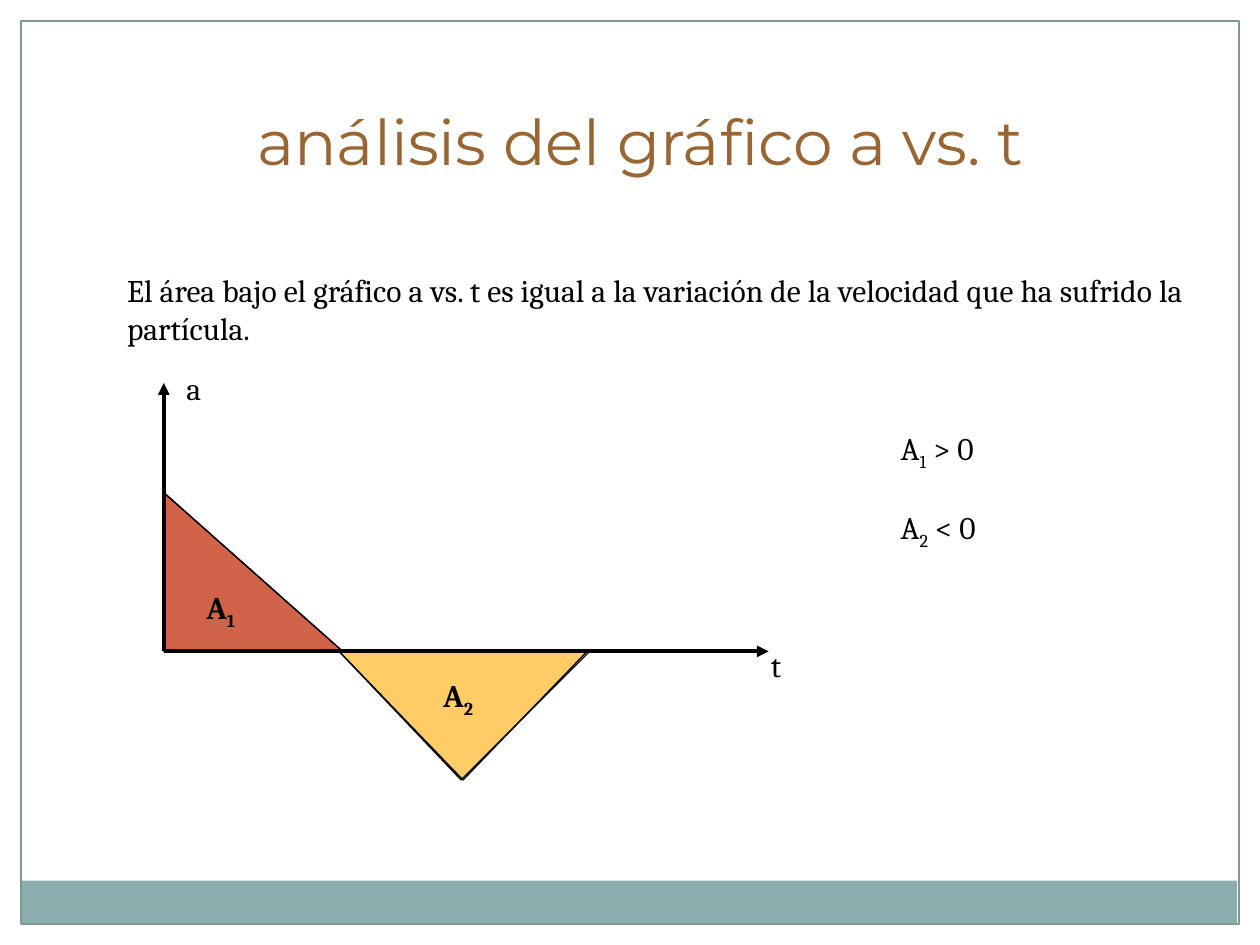
from lxml.etree import SubElement
from pptx import Presentation
from pptx.dml.color import RGBColor
from pptx.enum.shapes import MSO_CONNECTOR, MSO_SHAPE
from pptx.enum.text import MSO_ANCHOR, MSO_AUTO_SIZE, PP_ALIGN
from pptx.oxml.ns import qn
from pptx.util import Pt


def color(code):
    return RGBColor.from_string(code)


class Page:
    """Draws styled elements on one slide, with lengths in points."""

    ink = "000000"
    font = "Cambria"
    size = 18

    def __init__(self, slide):
        self.slide = slide
        self.shapes = slide.shapes

    def style(self, para, font, size, code, bold=False, align=PP_ALIGN.LEFT):
        para.alignment = align
        para.font.name = font
        para.font.size = Pt(size)
        para.font.bold = bold
        para.font.color.rgb = color(code)

    def title(self, text, box):
        shape = self.shapes.title
        shape.left, shape.top, shape.width, shape.height = map(Pt, box)
        frame = shape.text_frame
        frame.text = text
        frame.auto_size = MSO_AUTO_SIZE.NONE
        frame.vertical_anchor = MSO_ANCHOR.TOP
        self.style(frame.paragraphs[0], "Montserrat", 36, "996633",
                   align=PP_ALIGN.CENTER)

    def text(self, text, box, sub="", rest="", bold=False, align=PP_ALIGN.LEFT):
        frame = self.shapes.add_textbox(*map(Pt, box)).text_frame
        frame.word_wrap = True
        para = frame.paragraphs[0]
        self.style(para, self.font, self.size, self.ink, bold, align)
        para.add_run().text = text
        if sub:
            run = para.add_run()
            run.text = sub
            run.font._element.set("baseline", "-25000")
        if rest:
            para.add_run().text = rest

    def shape(self, kind, box, fill=None, line=None, turn=0):
        shape = self.shapes.add_shape(kind, *map(Pt, box))
        shape.shadow.inherit = False
        shape.rotation = turn
        if fill:
            shape.fill.solid()
            shape.fill.fore_color.rgb = color(fill)
        else:
            shape.fill.background()
        if line:
            shape.line.color.rgb = color(line)
            shape.line.width = Pt(0.75)
        else:
            shape.line.fill.background()

    def line(self, start, end, width=0.75, arrow=False):
        line = self.shapes.add_connector(
            MSO_CONNECTOR.STRAIGHT, *map(Pt, start + end))
        line.line.color.rgb = color(self.ink)
        line.line.width = Pt(width)
        if arrow:
            SubElement(line.line._get_or_add_ln(), qn("a:tailEnd"), type="triangle")
        SubElement(line._element.spPr, qn("a:effectLst"))


def main():
    deck = Presentation()
    deck.slide_width, deck.slide_height = Pt(720), Pt(540)
    page = Page(deck.slides.add_slide(deck.slide_layouts[5]))

    page.shape(MSO_SHAPE.RECTANGLE, (11.5, 503.3, 695.5, 24.5), fill="8CADAE")
    page.shape(MSO_SHAPE.RECTANGLE, (12, 12, 696, 516), line="7C999A")
    page.title("análisis del gráfico a vs. t", (58.3, 54.7, 614.9, 68.4))
    page.text("El área bajo el gráfico a vs. t es igual a la variación de la "
              "velocidad que ha sufrido la partícula.",
              (65.5, 151.2, 617.8, 50.4), align=PP_ALIGN.JUSTIFY)

    left, base = 93.6, 372.2
    top, low = 281.5, 445.7
    cross, mid, right = 193.7, 263.5, 337
    foot = 195.8
    page.shape(MSO_SHAPE.RIGHT_TRIANGLE, (left, top, foot - left, base - top),
               "D16349", page.ink)
    page.shape(MSO_SHAPE.ISOSCELES_TRIANGLE, (cross, base, 141.8, low - base),
               "FFCC66", page.ink, 180)
    for start, end in (((left, top), (foot, base)),
                       ((cross, base), (mid, low)),
                       ((mid, low), (right, base))):
        page.line(start, end)
    for end in ((439.2, base), (left, 218.9)):
        page.line((left, base), end, 2.25, True)

    for name, x, y in (("a", 99.4, 207.4), ("t", 433.4, 365.8)):
        page.text(name, (x, y, 28, 28.8))
    for sub, x, y in (("1", 110.9, 332.6), ("2", 246.2, 383)):
        page.text("A", (x, y, 45.4, 28.8), sub, bold=True)
    for sub, rest, y in (("1", " > 0", 241.9), ("2", " < 0", 286.6)):
        page.text("A", (507.6, y, 85, 28.8), sub, rest)
    deck.save("out.pptx")


if __name__ == "__main__":
    main()
